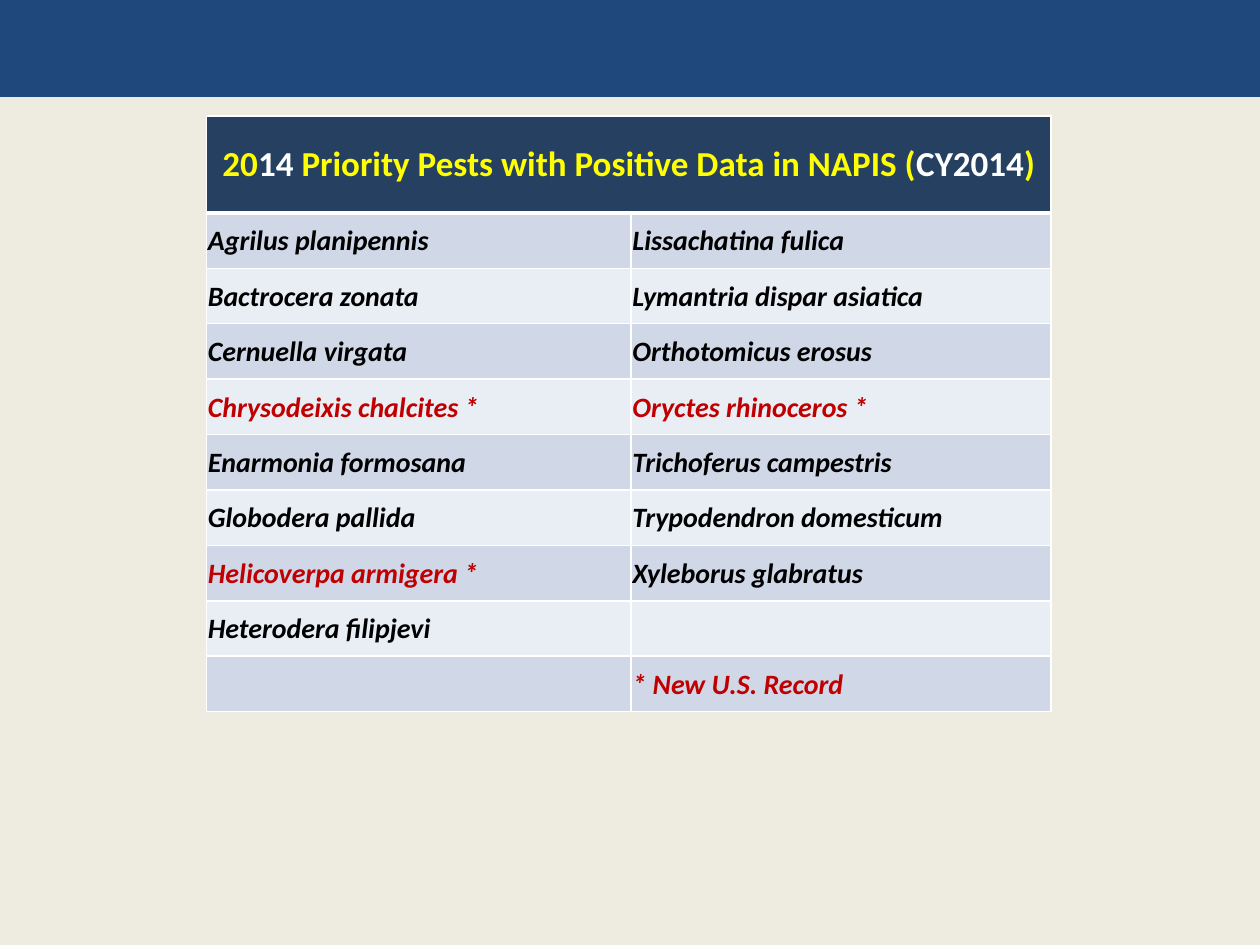
from typing import NamedTuple

import pptx
import pptx.dml.color
import pptx.enum.shapes
import pptx.enum.text
import pptx.oxml.ns
import pptx.util
from lxml import etree
from pptx.util import Inches

COLORS = {
    "background": "EEECE1",
    "banner": "1F497D",
    "header": "254061",
    "odd_row": "D0D8E8",
    "even_row": "E9EDF4",
    "border": "FFFFFF",
    "yellow": "FFFF00",
    "white": "FFFFFF",
    "black": "000000",
    "new_record": "C00000",
}


class Span(NamedTuple):
    text: str
    color: str


class PestRow(NamedTuple):
    left: str
    right: str


HEADING = [
    Span("20", "yellow"),
    Span("14", "white"),
    Span(" Priority Pests with Positive Data in NAPIS (", "yellow"),
    Span("CY2014", "white"),
    Span(")", "yellow"),
]
PESTS = [
    PestRow("Agrilus planipennis", "Lissachatina fulica"),
    PestRow("Bactrocera zonata", "Lymantria dispar asiatica"),
    PestRow("Cernuella virgata", "Orthotomicus erosus"),
    PestRow("Chrysodeixis chalcites *", "Oryctes rhinoceros *"),
    PestRow("Enarmonia formosana", "Trichoferus campestris"),
    PestRow("Globodera pallida", "Trypodendron domesticum"),
    PestRow("Helicoverpa armigera *", "Xyleborus glabratus"),
    PestRow("Heterodera filipjevi", ""),
    PestRow("", "* New U.S. Record"),
]
COLUMN_WIDTHS = (3.37, 3.33)
HEADING_HEIGHT = 0.77
PEST_HEIGHT = 0.44


def rgb(name: str) -> pptx.dml.color.RGBColor:
    return pptx.dml.color.RGBColor.from_string(COLORS[name])


def add_text(paragraph, text: str, *, color: str, size: float, italic: bool = False) -> None:
    run = paragraph.add_run()
    run.text = text
    font = run.font
    font.name = "Calibri"
    font.size = pptx.util.Pt(size)
    font.bold = True
    font.italic = italic
    font.color.rgb = rgb(color)


def style_cell(cell, fill: str, *, top: float = 1, bottom: float = 1) -> None:
    """Set borders, with widths in points, and then the fill that must follow them."""
    properties = cell._tc.get_or_add_tcPr()
    qn = pptx.oxml.ns.qn
    for side, width in {"L": 1, "R": 1, "T": top, "B": bottom}.items():
        line = etree.SubElement(properties, qn(f"a:ln{side}"), w=str(pptx.util.Pt(width)))
        solid = etree.SubElement(line, qn("a:solidFill"))
        etree.SubElement(solid, qn("a:srgbClr"), val=COLORS["border"])
    cell.fill.solid()
    cell.fill.fore_color.rgb = rgb(fill)
    cell.vertical_anchor = pptx.enum.text.MSO_ANCHOR.MIDDLE


def add_banner(slide) -> None:
    banner = slide.shapes.add_shape(
        pptx.enum.shapes.MSO_SHAPE.RECTANGLE, 0, 0, Inches(10), Inches(0.77)
    )
    banner.shadow.inherit = False
    banner.fill.solid()
    banner.fill.fore_color.rgb = rgb("banner")
    banner.line.fill.background()


def fill_heading(table) -> None:
    for column in range(len(COLUMN_WIDTHS)):
        style_cell(table.cell(0, column), "header", bottom=3)
    heading = table.cell(0, 0)
    heading.merge(table.cell(0, len(COLUMN_WIDTHS) - 1))
    paragraph = heading.text_frame.paragraphs[0]
    paragraph.alignment = pptx.enum.text.PP_ALIGN.CENTER
    for span in HEADING:
        add_text(paragraph, span.text, color=span.color, size=20)


def fill_pest(cell, name: str, row: int) -> None:
    style_cell(cell, "odd_row" if row % 2 else "even_row", top=3 if row == 1 else 1)
    cell.margin_left = cell.margin_right = cell.margin_top = Inches(0.01)
    cell.margin_bottom = 0
    if name:
        color = "new_record" if "*" in name else "black"
        add_text(cell.text_frame.paragraphs[0], name, color=color, size=16, italic=True)


def add_pest_table(slide) -> None:
    heights = [HEADING_HEIGHT] + [PEST_HEIGHT] * len(PESTS)
    table = slide.shapes.add_table(
        len(heights), len(COLUMN_WIDTHS), Inches(1.64), Inches(0.92),
        Inches(sum(COLUMN_WIDTHS)), Inches(sum(heights)),
    ).table
    for column, width in zip(table.columns, COLUMN_WIDTHS):
        column.width = Inches(width)
    for row, height in zip(table.rows, heights):
        row.height = Inches(height)
    fill_heading(table)
    for row, pests in enumerate(PESTS, start=1):
        for column, name in enumerate(pests):
            fill_pest(table.cell(row, column), name, row)


def main() -> None:
    presentation = pptx.Presentation()
    presentation.slide_width = Inches(10)
    presentation.slide_height = Inches(7.5)
    blank_layout = presentation.slide_layouts[6]
    slide = presentation.slides.add_slide(blank_layout)
    slide.background.fill.solid()
    slide.background.fill.fore_color.rgb = rgb("background")
    add_banner(slide)
    add_pest_table(slide)
    presentation.save("out.pptx")


if __name__ == "__main__":
    main()
